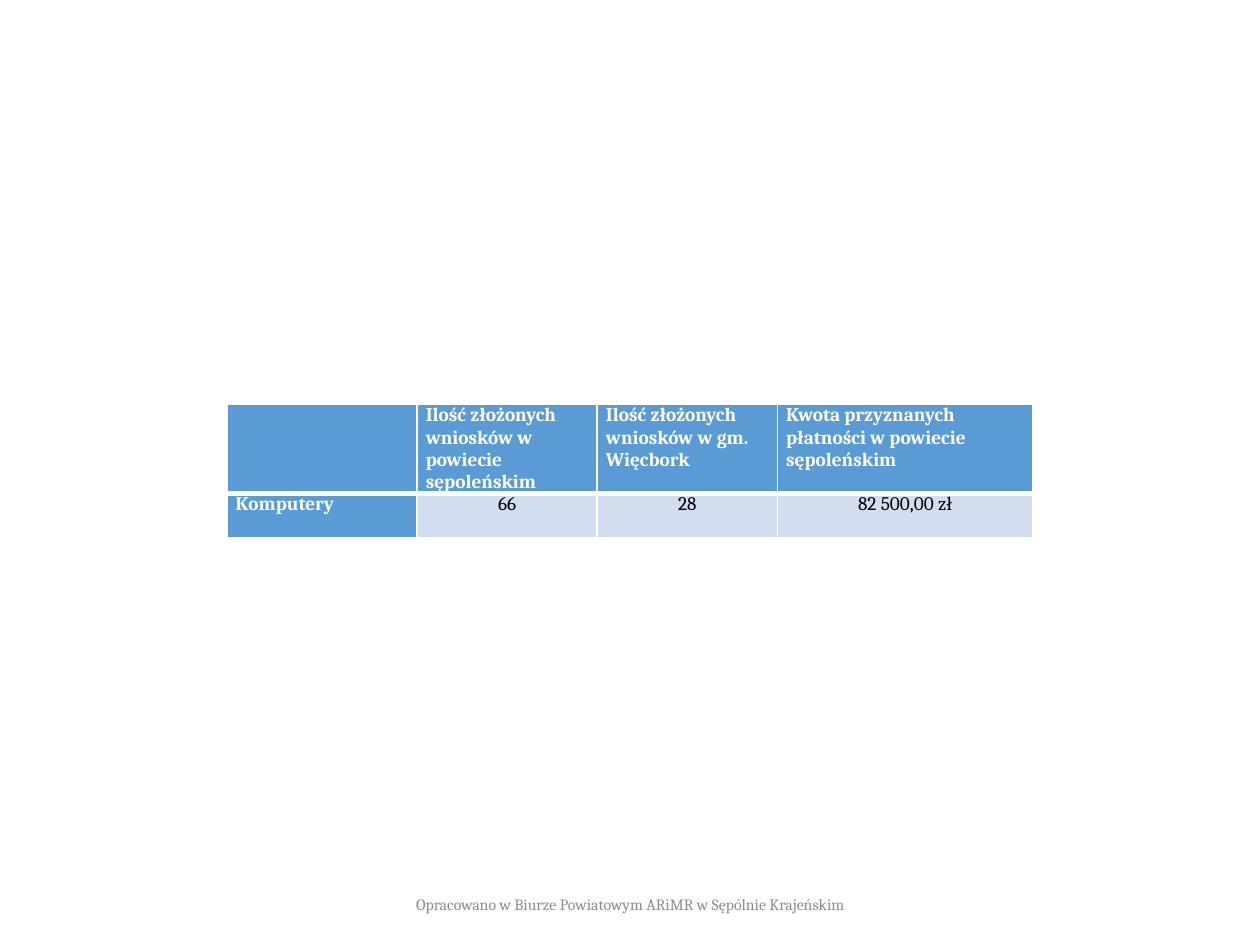
from lxml.etree import SubElement
from pptx import Presentation
from pptx.dml.color import RGBColor
from pptx.enum.text import MSO_ANCHOR as Anchor, PP_ALIGN as Align
from pptx.oxml.ns import qn
from pptx.util import Inches, Pt

WIDTH, HEIGHT = 10, 7.5
FONT = "Cambria"
BLUE, PALE, WHITE, BLACK, GREY = "5B9BD5", "D2DEEF", "FFFFFF", "000000", "8C8C8C"

ROWS = [
    ["", "Ilość złożonych wniosków w powiecie sępoleńskim",
     "Ilość złożonych wniosków w gm. Więcbork",
     "Kwota przyznanych płatności w powiecie sępoleńskim"],
    ["Komputery", "66", "28", "82 500,00 zł"],
]
COLUMN_WIDTHS = [1.51, 1.43, 1.43, 2.03]
ROW_HEIGHTS = [0.7, 0.35]
TABLE_TOP = 3.21
FOOTER = "Opracowano w Biurze Powiatowym ARiMR w Sępólnie Krajeńskim"
FOOTER_WIDTH, FOOTER_HEIGHT, FOOTER_TOP = 3.97, 0.4, 6.98


def color(value):
    return RGBColor.from_string(value)


def write_text(frame, text, size=11, fill=BLACK, bold=False, align=Align.LEFT):
    frame.word_wrap = True
    paragraph = frame.paragraphs[0]
    paragraph.alignment = align
    run = paragraph.add_run()
    run.text = text
    run.font.name = FONT
    run.font.size = Pt(size)
    run.font.bold = bold
    run.font.color.rgb = color(fill)


def add_borders(cell, widths):
    properties = cell._tc.get_or_add_tcPr()
    for side, width in widths.items():
        line = SubElement(properties, qn(f"a:ln{side}"), w=str(Pt(width)))
        SubElement(SubElement(line, qn("a:solidFill")), qn("a:srgbClr"), val=WHITE)


def add_data_table(slide):
    left = (WIDTH - sum(COLUMN_WIDTHS)) / 2
    table = slide.shapes.add_table(
        len(ROWS), len(COLUMN_WIDTHS), Inches(left), Inches(TABLE_TOP),
        Inches(sum(COLUMN_WIDTHS)), Inches(sum(ROW_HEIGHTS))).table
    for column, width in zip(table.columns, COLUMN_WIDTHS):
        column.width = Inches(width)
    for row, height in zip(table.rows, ROW_HEIGHTS):
        row.height = Inches(height)
    for row_index, values in enumerate(ROWS):
        for column_index, value in enumerate(values):
            cell = table.cell(row_index, column_index)
            is_header = row_index == 0
            is_label = is_header or column_index == 0
            cell.margin_left = cell.margin_right = Inches(0.07)
            cell.margin_top = cell.margin_bottom = 0
            add_borders(cell, {"L": 1, "R": 1, "T": 1 if is_header else 3,
                               "B": 3 if is_header else 1})
            cell.fill.solid()
            cell.fill.fore_color.rgb = color(BLUE if is_label else PALE)
            if value:
                write_text(cell.text_frame, value, bold=is_label,
                           fill=WHITE if is_label else BLACK,
                           align=Align.LEFT if is_label else Align.CENTER)


def add_footer(slide):
    box = slide.shapes.add_textbox(
        Inches((WIDTH - FOOTER_WIDTH) / 2), Inches(FOOTER_TOP),
        Inches(FOOTER_WIDTH), Inches(FOOTER_HEIGHT))
    box.text_frame.vertical_anchor = Anchor.MIDDLE
    write_text(box.text_frame, FOOTER, size=9, fill=GREY, align=Align.CENTER)


def main():
    presentation = Presentation()
    presentation.slide_width = Inches(WIDTH)
    presentation.slide_height = Inches(HEIGHT)
    slide = presentation.slides.add_slide(presentation.slide_layouts[6])
    add_data_table(slide)
    add_footer(slide)
    presentation.save("out.pptx")


if __name__ == "__main__":
    main()
